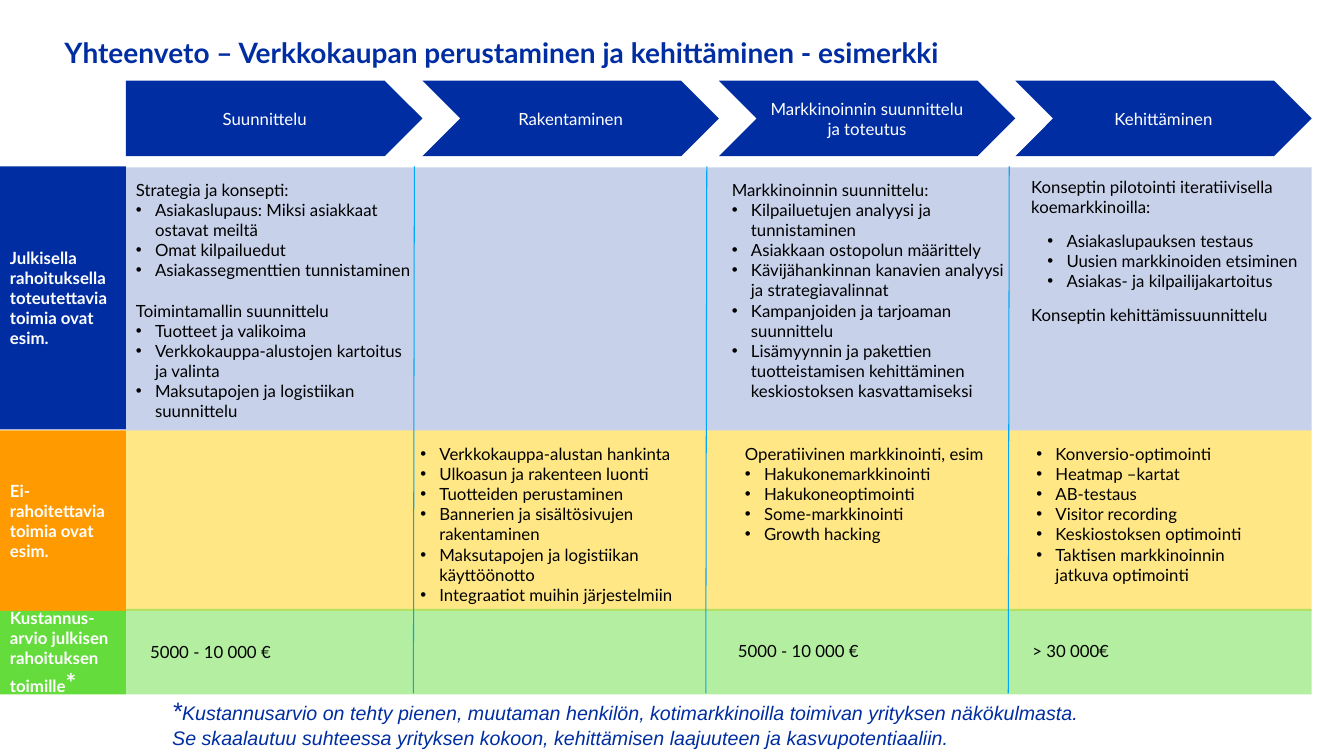
from lxml import etree
from pptx import Presentation
from pptx.dml.color import RGBColor
from pptx.enum.shapes import MSO_CONNECTOR, MSO_SHAPE
from pptx.enum.text import MSO_ANCHOR, PP_ALIGN
from pptx.oxml.ns import qn
from pptx.util import Inches, Pt

RECT, PLATE, CHEVRON = MSO_SHAPE.RECTANGLE, MSO_SHAPE.PENTAGON, MSO_SHAPE.CHEVRON
STRAIGHT = MSO_CONNECTOR.STRAIGHT
TOP, MIDDLE = MSO_ANCHOR.TOP, MSO_ANCHOR.MIDDLE
LEFT, CENTER = PP_ALIGN.LEFT, PP_ALIGN.CENTER

COLORS = {
    "blue": "002EA2", "yellow": "FFCD00", "orange": "FF9B00", "green": "64DC3C",
    "divider": "00A6F9", "black": "000000", "white": "FFFFFF",
}
LABEL_WIDTH, BAND_WIDTH, PHASE_WIDTH = 1.25, 11.76, 2.94

PHASES = ["Suunnittelu", "Rakentaminen", "Markkinoinnin suunnittelu ja toteutus", "Kehittäminen"]

BANDS = [
    (4.27, 1.79, "yellow", 48),
    (1.66, 2.61, "blue", 22),
    (6.04, 0.85, "green", 48),
]

ROW_LABELS = [
    (1.65, 2.61, "blue", ["Julkisella rahoituksella toteutettavia toimia ovat esim."]),
    (4.27, 1.79, "orange", ["Ei-", "rahoitettavia toimia ovat esim."]),
    (6.06, 0.83, "green",
     ["Kustannus-", [("arvio julkisen rahoituksen toimille", 12), ("*", 18)]]),
]

ACTIONS = [
    ((1.25, 1.73, 2.94, 2.65), [
        "Strategia ja konsepti:",
        "•Asiakaslupaus: Miksi asiakkaat ostavat meiltä",
        "•Omat kilpailuedut",
        "•Asiakassegmenttien tunnistaminen",
        "Toimintamallin suunnittelu",
        "•Tuotteet ja valikoima",
        "•Verkkokauppa-alustojen kartoitus ja valinta",
        "•Maksutapojen ja logistiikan suunnittelu",
    ], {"space_before": {4: 14.4}}),
    ((4.07, 4.35, 2.94, 1.98), [
        "•Verkkokauppa-alustan hankinta",
        "•Ulkoasun ja rakenteen luonti",
        "•Tuotteiden perustaminen",
        "•Bannerien ja sisältösivujen rakentaminen",
        "•Maksutapojen ja logistiikan käyttöönotto",
        "•Integraatiot muihin järjestelmiin",
    ], {}),
    ((7.16, 1.73, 2.94, 2.21), [
        "Markkinoinnin suunnittelu:",
        "•Kilpailuetujen analyysi ja tunnistaminen",
        "•Asiakkaan ostopolun määrittely",
        "•Kävijähankinnan kanavien analyysi ja strategiavalinnat",
        "•Kampanjoiden ja tarjoaman suunnittelu",
        "•Lisämyynnin ja pakettien tuotteistamisen kehittäminen keskiostoksen kasvattamiseksi",
    ], {}),
    ((10.13, 1.7, 3, 2.26), [
        "Konseptin pilotointi iteratiivisella koemarkkinoilla:",
        "•Asiakaslupauksen testaus",
        "•Uusien markkinoiden etsiminen",
        "•Asiakas- ja kilpailijakartoitus",
        "Konseptin kehittämissuunnittelu",
    ], {"space_before": {1: 10, 4: 10}, "bullet_margin": 0.35}),
    ((7.29, 4.35, 2.81, 1.11), [
        "Operatiivinen markkinointi, esim",
        "•Hakukonemarkkinointi",
        "•Hakukoneoptimointi",
        "•Some-markkinointi",
        "•Growth hacking",
    ], {}),
    ((10.18, 4.35, 2.62, 1.51), [
        "•Konversio-optimointi",
        "•Heatmap –kartat",
        "•AB-testaus",
        "•Visitor recording",
        "•Keskiostoksen optimointi",
        "•Taktisen markkinoinnin jatkuva optimointi",
    ], {}),
]

COSTS = [
    ((1.39, 6.18, 2.94, 0.57), "5000 - 10 000 €"),
    ((7.22, 6.17, 2.94, 0.57), "5000 - 10 000 €"),
    ((10.14, 6.12, 2.94, 0.68), "> 30 000€"),
]

FOOTNOTE = [
    [("*", 18), ("Kustannusarvio on tehty pienen, muutaman henkilön, kotimarkkinoilla "
                 "toimivan yrityksen näkökulmasta.", 14)],
    "Se skaalautuu suhteessa yrityksen kokoon, kehittämisen laajuuteen ja kasvupotentiaaliin.",
]


def rgb(color):
    """Return the named colour."""
    return RGBColor.from_string(COLORS[color])


def add_bullet(paragraph, margin):
    """Give a paragraph a hanging round bullet."""
    properties = paragraph._p.get_or_add_pPr()
    properties.set("marL", str(Inches(margin)))
    properties.set("indent", str(-Inches(0.19)))
    etree.SubElement(properties, qn("a:buFont"), typeface="Arial")
    etree.SubElement(properties, qn("a:buChar"), char="•")


def write_text(holder, paragraphs, *, size=12, font="Lato", color="black", bold=False,
               italic=False, align=LEFT, anchor=TOP, inset=0.05, line_spacing=None,
               space_before=None, bullet_margin=0.19):
    """Fill a shape with paragraphs; a leading bullet sign makes a list item."""
    frame = holder.text_frame
    frame.word_wrap = True
    frame.vertical_anchor = anchor
    frame.margin_left = frame.margin_right = Inches(0.1)
    frame.margin_top = frame.margin_bottom = Inches(inset)
    for index, content in enumerate(paragraphs):
        paragraph = frame.paragraphs[0] if index == 0 else frame.add_paragraph()
        pieces = [(content, size)] if isinstance(content, str) else content
        if pieces[0][0].startswith("•"):
            add_bullet(paragraph, bullet_margin)
        paragraph.alignment = align
        if line_spacing:
            paragraph.line_spacing = line_spacing
        if space_before and index in space_before:
            paragraph.space_before = Pt(space_before[index])
        for words, points in pieces:
            run = paragraph.add_run()
            run.text = words.removeprefix("•")
            run.font.size = Pt(points)
            run.font.name = font
            run.font.bold = bold
            run.font.italic = italic
            run.font.color.rgb = rgb(color)


def add_text(slide, place, paragraphs, **style):
    """Add a text box."""
    box = slide.shapes.add_textbox(*map(Inches, place))
    write_text(box, paragraphs, **style)


def add_block(slide, preset, place, color, opacity=100):
    """Add a filled shape without outline."""
    block = slide.shapes.add_shape(preset, *map(Inches, place))
    block.shadow.inherit = False
    block.fill.solid()
    block.fill.fore_color.rgb = rgb(color)
    block.line.fill.background()
    if opacity < 100:
        fill_color = block._element.spPr.find(f"{qn('a:solidFill')}/{qn('a:srgbClr')}")
        etree.SubElement(fill_color, qn("a:alpha"), val=str(opacity * 1000))
    return block


def add_divider(slide, x):
    """Add a thin, slightly leaning line between two phases."""
    ends = map(Inches, (x, 1.65, x - 0.01, 6.88))
    divider = slide.shapes.add_connector(STRAIGHT, *ends)
    divider.line.color.rgb = rgb("divider")
    divider.line.width = Pt(0.75)
    etree.SubElement(divider._element.spPr, qn("a:effectLst"))


def main():
    """Build the summary slide."""
    deck = Presentation()
    deck.slide_width, deck.slide_height = Inches(13.33), Inches(7.5)
    slide = deck.slides.add_slide(deck.slide_layouts[6])

    for top, height, color, opacity in BANDS:
        add_block(slide, RECT, (LABEL_WIDTH, top, BAND_WIDTH, height), color, opacity)
    add_text(slide, (0.54, 0.16, 12.25, 0.75),
             ["Yhteenveto – Verkkokaupan perustaminen ja kehittäminen - esimerkki"],
             size=20, color="blue", bold=True, anchor=MIDDLE, line_spacing=0.9)
    for index, phase in enumerate(PHASES):
        place = (LABEL_WIDTH + index * PHASE_WIDTH, 0.8, PHASE_WIDTH, 0.75)
        arrow = add_block(slide, CHEVRON if index else PLATE, place, "blue")
        write_text(arrow, [phase], color="white", align=CENTER, anchor=MIDDLE, inset=0.1)
    for top, height, color, label in ROW_LABELS:
        heading = add_block(slide, RECT, (0, top, LABEL_WIDTH, height), color)
        write_text(heading, label, color="white", bold=True, anchor=MIDDLE, inset=0.1)
    for place, actions, style in ACTIONS:
        add_text(slide, place, actions, **style)
    for place, cost in COSTS:
        add_text(slide, place, [cost], anchor=MIDDLE)
    for x in (4.11, 7.01, 10.01):
        add_divider(slide, x)
    add_text(slide, (1.61, 6.85, 9.68, 0.64), FOOTNOTE,
             size=14, font="Arial", color="blue", italic=True)
    deck.save("out.pptx")


if __name__ == "__main__":
    main()
